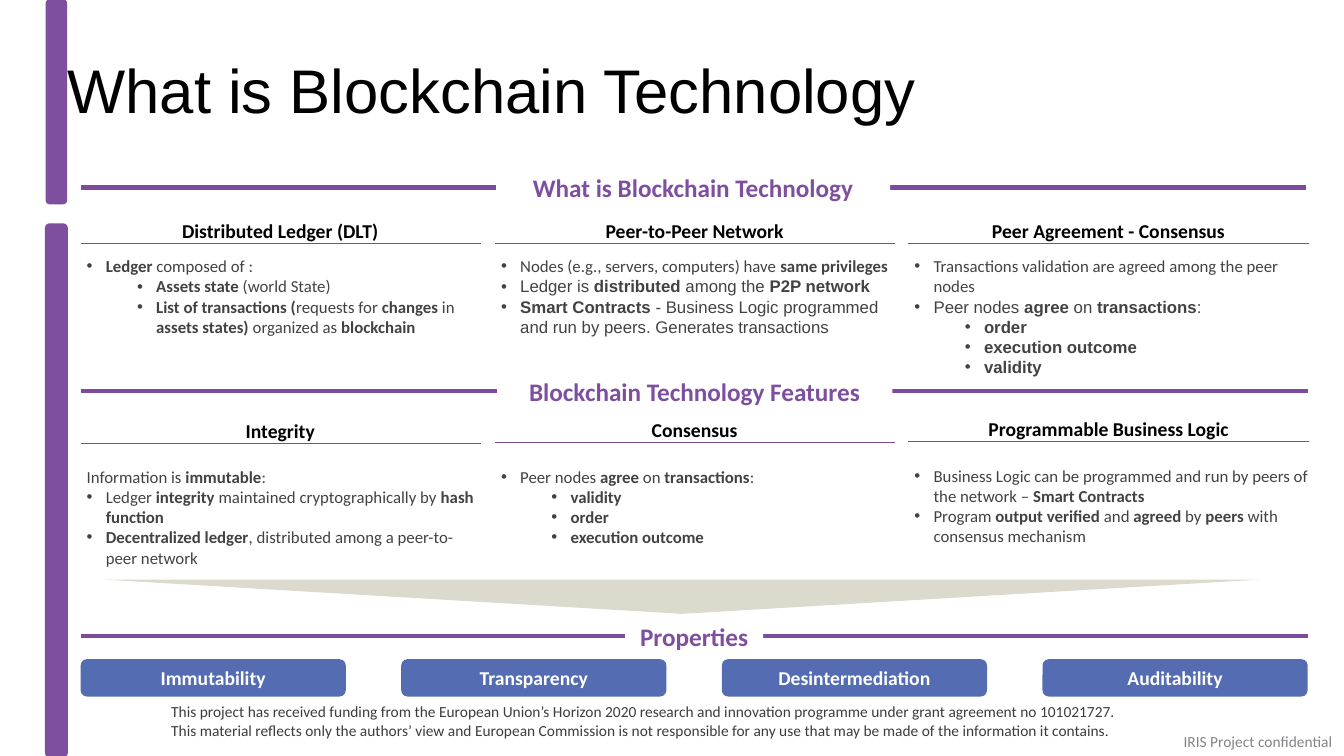
from dataclasses import dataclass

from lxml import etree
from pptx import Presentation
from pptx.dml.color import RGBColor
from pptx.enum.shapes import MSO_CONNECTOR, MSO_SHAPE
from pptx.enum.text import MSO_ANCHOR, PP_ALIGN
from pptx.oxml.ns import qn
from pptx.util import Pt

RECTANGLE = MSO_SHAPE.RECTANGLE
ROUNDED = MSO_SHAPE.ROUNDED_RECTANGLE
DOWN_ARROW = MSO_SHAPE.DOWN_ARROW
STRAIGHT = MSO_CONNECTOR.STRAIGHT
TOP, MIDDLE = MSO_ANCHOR.TOP, MSO_ANCHOR.MIDDLE
LEFT, CENTER = PP_ALIGN.LEFT, PP_ALIGN.CENTER
EMU_PER_PX = 9144
COLUMN_WIDTH = 397
PLAIN, ITEM, SUBITEM = "plain", "item", "subitem"
INDENTS = {PLAIN: (6, 0), ITEM: (25, -19), SUBITEM: (75, -19)}


@dataclass(frozen=True)
class Theme:
    heading_font: str = "Arial"
    body_font: str = "Calibri"
    purple: str = "7F4F9F"
    rule: str = "7C4B9D"
    pill: str = "546CB2"
    arrow: str = "DBDACD"
    white: str = "FFFFFF"
    black: str = "000000"
    body: str = "414244"
    funding: str = "3C3C3C"
    notice: str = "838487"
    title_size: int = 44
    section_size: int = 18
    heading_size: int = 14
    body_size: int = 12
    footer_size: int = 11


THEME = Theme()
SANS, ARIAL = THEME.body_font, THEME.heading_font

SECTIONS = [
    ("What is Blockchain Technology", 186, 1295, (492, 162, 391, 48)),
    ("Blockchain Technology Features", 388, 1297, (493, 364, 392, 48)),
    ("Properties", 631, 1297, (620, 616, 137, 30)),
]

TOPICS = [
    ("Distributed Ledger (DLT)", 80, 242, 224, 249, 105, [
        (ITEM, SANS, "**Ledger** composed of :"),
        (SUBITEM, SANS, "**Assets state **(world State)"),
        (SUBITEM, SANS, "**List of transactions (**requests for **changes **in "
                        "**assets states) **organized as **blockchain**"),
    ]),
    ("Peer-to-Peer Network", 491, 242, 224, 249, 105, [
        (ITEM, SANS, "Nodes (e.g., servers, computers) have **same privileges**"),
        (ITEM, ARIAL, "Ledger is **distributed **among the **P2P network**"),
        (ITEM, ARIAL, "**Smart Contracts** - Business Logic programmed and run by "
                      "peers. Generates transactions"),
    ]),
    ("Peer Agreement - Consensus", 901, 242, 271, 249, 125, [
        (ITEM, SANS, "Transactions validation are agreed among the peer nodes"),
        (ITEM, ARIAL, "Peer nodes **agree **on **transactions**:"),
        (SUBITEM, ARIAL, "**order**"),
        (SUBITEM, ARIAL, "**execution outcome**"),
        (SUBITEM, ARIAL, "**validity**"),
    ]),
    ("Integrity", 80, 440, 298, 458, 105, [
        (PLAIN, SANS, "Information is **immutable**:"),
        (ITEM, SANS, "Ledger **integrity** maintained cryptographically by **hash function**"),
        (ITEM, SANS, "**Decentralized ledger**, distributed among a peer-to-peer network"),
    ]),
    ("Consensus", 491, 439, 224, 458, 105, [
        (ITEM, SANS, "Peer nodes **agree **on **transactions**:"),
        (SUBITEM, SANS, "**validity**"),
        (SUBITEM, SANS, "**order**"),
        (SUBITEM, SANS, "**execution outcome**"),
    ]),
    ("Programmable Business Logic", 901, 438, 271, 457, 105, [
        (ITEM, SANS, "Business Logic can be programmed and run by peers of the "
                     "network – **Smart Contracts**"),
        (ITEM, SANS, "Program **output verified **and **agreed **by **peers **with "
                     "consensus mechanism"),
    ]),
]

PROPERTIES = ["Immutability", "Transparency", "Desintermediation", "Auditability"]
FUNDING = (
    "This project has received funding from the European Union’s Horizon 2020 research and "
    "innovation programme under grant agreement no 101021727. This material reflects only the "
    "authors’ view and European Commission is not responsible for any use that may be made of "
    "the information it contains."
)


def px(length):
    return int(length * EMU_PER_PX)


def color(value):
    return RGBColor.from_string(value)


def add_block(slide, kind, box, fill, line_width=0):
    shape = slide.shapes.add_shape(kind, *map(px, box))
    shape.shadow.inherit = False
    shape.fill.solid()
    shape.fill.fore_color.rgb = color(fill)
    if line_width:
        shape.line.color.rgb = color(fill)
        shape.line.width = Pt(line_width)
    else:
        shape.line.fill.background()
    return shape


def add_rule(slide, left, right, top, width):
    rule = slide.shapes.add_connector(STRAIGHT, px(left), px(top), px(right), px(top))
    rule.line.color.rgb = color(THEME.rule)
    rule.line.width = Pt(width)
    etree.SubElement(rule._element.spPr, qn("a:effectLst"))


def set_frame(shape, anchor, side=10, edge=5, wrap=True):
    frame = shape.text_frame
    frame.word_wrap = wrap
    frame.vertical_anchor = anchor
    frame.margin_left = frame.margin_right = px(side)
    frame.margin_top = frame.margin_bottom = px(edge)
    return frame


def add_run(paragraph, text, size, ink, font=SANS, bold=False):
    run = paragraph.add_run()
    run.text = text
    run.font.name = font
    run.font.size = Pt(size)
    run.font.bold = bold
    run.font.color.rgb = color(ink)


def add_label(slide, kind, box, fill, text, size, ink):
    shape = add_block(slide, kind, box, fill)
    paragraph = set_frame(shape, MIDDLE).paragraphs[0]
    paragraph.alignment = CENTER
    add_run(paragraph, text, size, ink, bold=True)


def add_text(slide, box, text, size, ink, font=SANS, anchor=TOP, margins=(10, 5), wrap=True):
    shape = slide.shapes.add_textbox(*map(px, box))
    paragraph = set_frame(shape, anchor, *margins, wrap).paragraphs[0]
    add_run(paragraph, text, size, ink, font)
    return paragraph


def set_bullet(paragraph, style):
    margin, indent = INDENTS[style]
    properties = paragraph._p.get_or_add_pPr()
    properties.set("marL", str(px(margin)))
    properties.set("indent", str(px(indent)))
    if style == PLAIN:
        etree.SubElement(properties, qn("a:buNone"))
        return
    bullet_color = etree.SubElement(properties, qn("a:buClr"))
    etree.SubElement(bullet_color, qn("a:srgbClr"), val=THEME.body)
    etree.SubElement(properties, qn("a:buFont"), typeface=ARIAL)
    etree.SubElement(properties, qn("a:buChar"), char="•")


def add_topic(slide, heading, left, rule_top, heading_width, body_top, body_height, items):
    body = add_block(slide, RECTANGLE, (left, body_top, COLUMN_WIDTH, body_height), THEME.white)
    frame = set_frame(body, TOP, side=0)
    for index, (style, font, text) in enumerate(items):
        paragraph = frame.add_paragraph() if index else frame.paragraphs[0]
        paragraph.alignment = LEFT
        paragraph.level = int(style == SUBITEM)
        set_bullet(paragraph, style)
        for position, part in enumerate(text.split("**")):
            if part:
                add_run(paragraph, part, THEME.body_size, THEME.body, font, position % 2 == 1)
    add_rule(slide, left, left + COLUMN_WIDTH, rule_top, 0.75)
    heading_left = left + (COLUMN_WIDTH - heading_width) // 2
    add_label(slide, RECTANGLE, (heading_left, rule_top - 23, heading_width, 20), THEME.white,
              heading, THEME.heading_size, THEME.black)


def add_section(slide, text, top, right, box):
    add_rule(slide, 80, right, top, 3)
    add_label(slide, RECTANGLE, box, THEME.white, text, THEME.section_size, THEME.purple)


def main():
    presentation = Presentation()
    presentation.slide_width, presentation.slide_height = px(1333), px(750)
    slide = presentation.slides.add_slide(presentation.slide_layouts[6])
    add_text(slide, (160, 692, 966, 44), FUNDING, THEME.footer_size, THEME.funding)
    add_text(slide, (1164, 721, 169, 28), "IRIS Project confidential",
             THEME.footer_size, THEME.notice, wrap=False)
    for top, height, line_width in ((223, 527, 2), (0, 202, 1)):
        add_block(slide, ROUNDED, (46, top, 20, height), THEME.purple, line_width)
    title = add_text(slide, (67, 30, 1200, 125), "What is Blockchain Technology",
                     THEME.title_size, THEME.black, ARIAL, MIDDLE, (0, 0))
    title.line_spacing = 0.9
    for topic in TOPICS:
        add_topic(slide, *topic)
    arrow = add_block(slide, DOWN_ARROW, (103, 575, 1147, 34), THEME.arrow)
    arrow.adjustments[1] = 1
    for section in SECTIONS:
        add_section(slide, *section)
    for index, name in enumerate(PROPERTIES):
        add_label(slide, ROUNDED, (80 + 318 * index, 654, 263, 37), THEME.pill,
                  name, THEME.heading_size, THEME.white)
    presentation.save("out.pptx")


if __name__ == "__main__":
    main()
